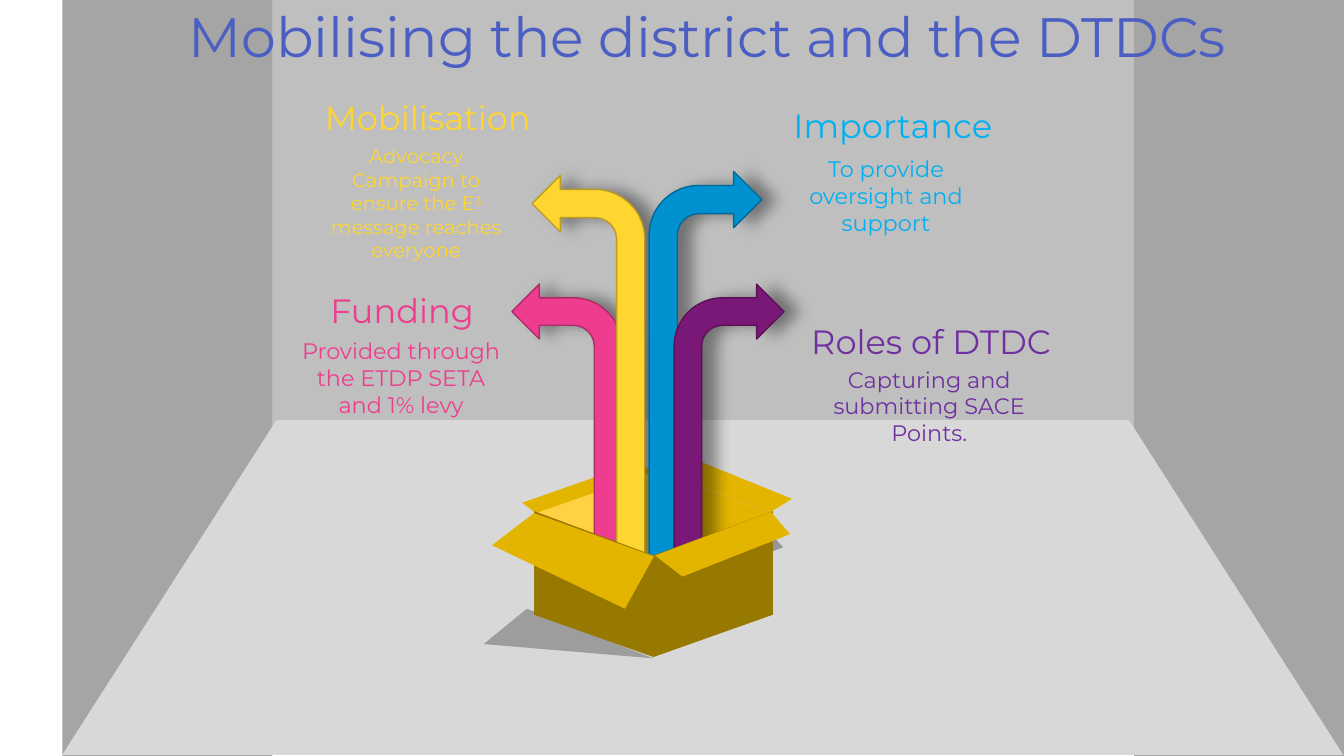
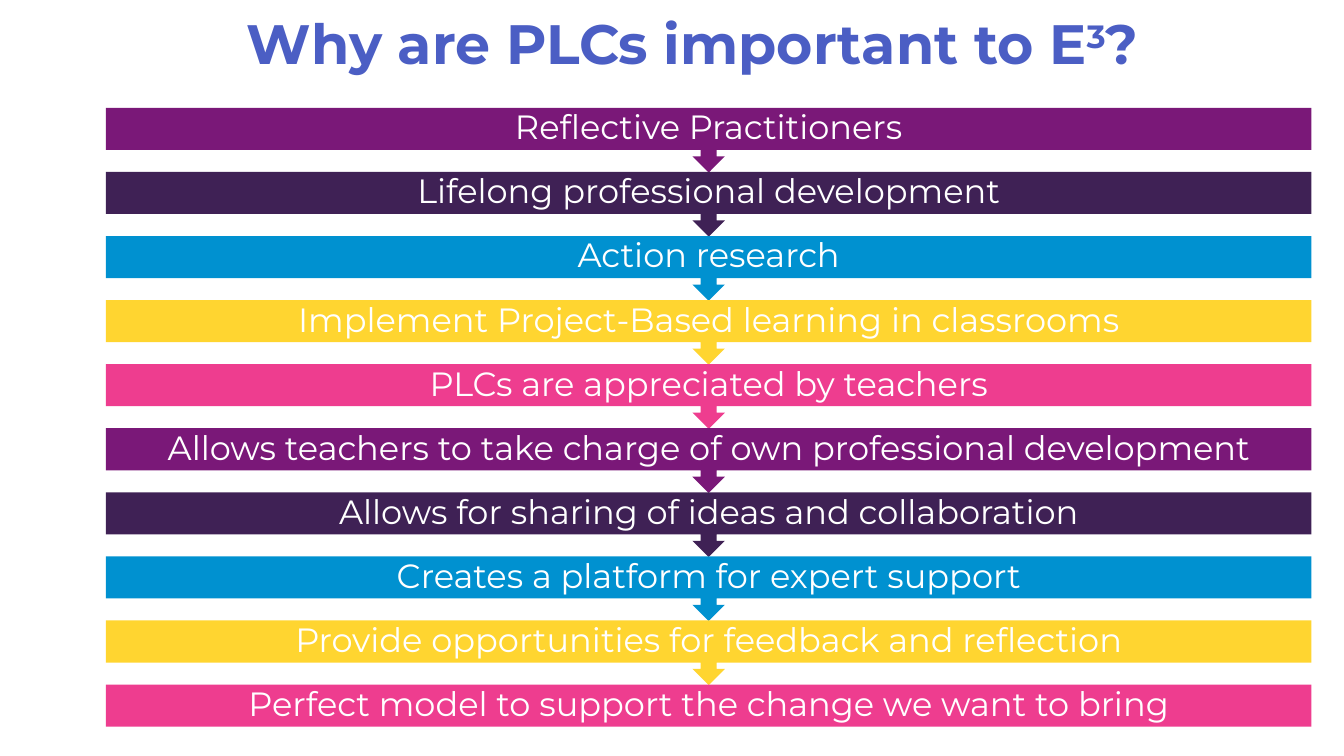
"""Build two slides on mobilising the district and on the value of PLCs."""
import pptx
import pptx.dml.color
import pptx.enum.shapes
import pptx.enum.text
import pptx.oxml
import pptx.oxml.ns
import pptx.util
from pptx.util import Cm

SHAPE = pptx.enum.shapes.MSO_SHAPE
ALIGN = pptx.enum.text.PP_ALIGN
ANCHOR = pptx.enum.text.MSO_ANCHOR
FONT = "Montserrat"
COLOURS = {
    "title": "4B5EC4", "white": "FFFFFF", "black": "000000",
    "back wall": "BFBFBF", "side wall": "A5A5A5", "floor": "D8D8D8",
    "pink": "EE3D8F", "yellow": "FFD530", "blue": "0091D0",
    "purple": "7A1878", "violet": "3F2155",
    "pink edge": "AD2C68", "yellow edge": "BA9B23",
    "blue edge": "006997", "purple edge": "591157",
    "sky": "00B0F0", "lilac": "7030A0",
    "box side": "977800", "flap": "E3B500", "box inside": "FFD243",
}

ROOM = [
    (SHAPE.RECTANGLE, (6.86, 0, 21.72, 13.06), "back wall", []),
    (SHAPE.RECTANGLE, (1.57, 0, 5.29, 19.05), "side wall", []),
    (SHAPE.RECTANGLE, (28.58, 0, 5.29, 19.05), "side wall", []),
    (SHAPE.TRAPEZOID, (1.57, 10.59, 32.28, 8.43), "floor", [0.64]),
]
FLOOR_SHADOW = [(16.46, 16.59), (12.19, 16.23), (13.28, 15.34)]
INNER_SHADOW = [(16.54, 14.27), (17.2, 14.76), (19.74, 13.79), (19.25, 13.28)]
BACK_OF_BOX = [
    ((13.89, 11.4, 2.11, 3.05), 270, "box inside",
     [(16.54, 11.86), (15.98, 11.68), (13.16, 12.67), (13.51, 12.93)]),
    ((16.81, 11.46, 2.36, 3.05), 90, "flap",
     [(16.46, 11.79), (17.15, 11.43), (19.96, 12.57), (19.38, 12.93)]),
]
FRONT_OF_BOX = [
    ("box side", [(13.46, 12.88), (16.48, 14), (16.48, 16.56), (13.46, 15.49)]),
    ("box side", [(19.48, 12.88), (16.46, 14), (16.46, 16.56), (19.48, 15.49)]),
    ("flap", [(13.46, 12.93), (12.4, 13.74), (15.75, 15.34), (16.48, 14.02)]),
    ("flap", [(16.51, 14), (17.2, 14.53), (19.91, 13.46), (19.43, 12.9)]),
]
ARROWS = [
    ("pink", (12.9, 7.16, 2.77, 7.57), True),
    ("yellow", (13.41, 4.42, 2.84, 9.7), True),
    ("blue", (16.36, 4.32, 2.84, 9.7), False),
    ("purple", (16.99, 7.16, 2.77, 7.57), False),
]
TOPICS = [
    ("Funding", (7.11, 7.19, 6.05, 1.27),
     "Provided through the ETDP SETA and 1% levy", (7.19, 8.38, 5.84, 2.31), 16, "pink"),
    ("Roles of DTDC", (19.35, 7.95, 8.23, 1.27),
     "Capturing and submitting SACE Points.", (20.22, 9.09, 6.4, 2.31), 16, "lilac"),
    ("Importance", (19.63, 2.51, 5.74, 1.27),
     "To provide oversight and support", (19.56, 3.78, 5.54, 2.31), 16, "sky"),
    ("Mobilisation", (7.77, 2.31, 6.02, 1.27),
     "Advocacy Campaign to ensure the E^3^ message reaches everyone",
     (7.85, 3.51, 5.28, 3.25), 14, "yellow"),
]
REASONS = [
    "Reflective Practitioners",
    "Lifelong professional development",
    "Action research",
    "Implement Project-Based learning in classrooms",
    "PLCs are appreciated by teachers",
    "Allows teachers to take charge of own professional development",
    "Allows for sharing of ideas and collaboration",
    "Creates a platform for expert support",
    "Provide opportunities for feedback and reflection",
    "Perfect model to support the change we want to bring",
]
REASON_COLOURS = ["purple", "violet", "blue", "yellow", "pink"]
FIRST_TOP, LAST_TOP, BAND_HEIGHT, CALLOUT_HEIGHT = 2.72, 17.25, 1.06, 1.63


def rgb(name):
    return pptx.dml.color.RGBColor.from_string(COLOURS[name])


def cms(box):
    return [Cm(length) for length in box]


def write(frame, text, size, colour, align=ALIGN.CENTER, bold=False, spacing=None):
    """Write text whose parts between carets are superscript."""
    frame.word_wrap = True
    paragraph = frame.paragraphs[0]
    paragraph.alignment = align
    if spacing:
        paragraph.line_spacing = spacing
    for index, part in enumerate(text.split("^")):
        run = paragraph.add_run()
        run.text = part
        run.font.name = FONT
        run.font.size = pptx.util.Pt(size)
        run.font.bold = bold
        run.font.color.rgb = rgb(colour)
        if index % 2:
            run.font._element.set("baseline", "30000")


def paint(shape, colour, alpha=None, edge=None):
    shape.shadow.inherit = False
    shape.fill.solid()
    shape.fill.fore_color.rgb = rgb(colour)
    if alpha:
        tint = shape.element.spPr.find(".//" + pptx.oxml.ns.qn("a:srgbClr"))
        tint.append(pptx.oxml.parse_xml(
            f'<a:alpha {pptx.oxml.ns.nsdecls("a")} val="{alpha * 1000}"/>'))
    if edge:
        shape.line.color.rgb = rgb(edge)
        shape.line.width = pptx.util.Pt(1)
    else:
        shape.line.fill.background()


def add_preset(slide, kind, box, colour, adjustments=(), edge=None):
    shape = slide.shapes.add_shape(kind, *cms(box))
    for index, value in enumerate(adjustments):
        shape.adjustments[index] = value
    paint(shape, colour, edge=edge)
    return shape


def add_outline(slide, points, colour, alpha=None):
    start, *others = [cms(point) for point in points]
    builder = slide.shapes.build_freeform(*start)
    builder.add_line_segments(others, close=True)
    paint(builder.convert_to_shape(), colour, alpha)


def add_text(slide, box, text, size, colour):
    write(slide.shapes.add_textbox(*cms(box)).text_frame, text, size, colour)


def add_title(slide, text, left, top, bold=False):
    title = slide.shapes.title
    title.left, title.top, title.width, title.height = cms((left, top, 27.66, 2.06))
    title.element.getparent().append(title.element)
    frame = title.text_frame
    frame.auto_size = pptx.enum.text.MSO_AUTO_SIZE.NONE
    frame.vertical_anchor = ANCHOR.MIDDLE
    write(frame, text, 39.6, "title", ALIGN.LEFT, bold, 0.9)


def add_arrow(slide, colour, box, points_left):
    arrow = add_preset(slide, SHAPE.BENT_ARROW, box, colour,
                       (0.25, 0.25, 0.25, 0.44), colour + " edge")
    if points_left:
        arrow.element.spPr.xfrm.set("flipH", "1")
    effects = arrow.element.spPr.find(pptx.oxml.ns.qn("a:effectLst"))
    effects.append(pptx.oxml.parse_xml(
        f'<a:outerShdw {pptx.oxml.ns.nsdecls("a")} blurRad="{pptx.util.Pt(11)}" '
        f'dist="{pptx.util.Pt(10)}" dir="0" algn="l" rotWithShape="0">'
        f'<a:srgbClr val="{COLOURS["black"]}"><a:alpha val="40000"/></a:srgbClr>'
        '</a:outerShdw>'))


def build_mobilising(slide):
    for kind, box, colour, adjustments in ROOM:
        add_preset(slide, kind, box, colour, adjustments)
    add_outline(slide, FLOOR_SHADOW, "black", 27)
    for heading, heading_box, detail, detail_box, size, colour in TOPICS:
        add_text(slide, heading_box, heading, 24, colour)
        add_text(slide, detail_box, detail, size, colour)
    for box, rotation, colour, flap in BACK_OF_BOX:
        add_preset(slide, SHAPE.ISOSCELES_TRIANGLE, box, colour).rotation = rotation
        add_outline(slide, flap, "flap")
    add_title(slide, "Mobilising the district and the DTDCs", 4.5, -0.03)
    add_outline(slide, INNER_SHADOW, "black", 30)
    for arrow in ARROWS:
        add_arrow(slide, *arrow)
    for colour, points in FRONT_OF_BOX:
        add_outline(slide, points, colour)


def build_reasons(slide):
    add_title(slide, "Why are PLCs important to E^3^?", 5.97, 0.15, bold=True)
    last = len(REASONS) - 1
    step = (LAST_TOP - FIRST_TOP) / last
    for index, reason in enumerate(REASONS):
        if index < last:
            kind, height = SHAPE.DOWN_ARROW_CALLOUT, CALLOUT_HEIGHT
            adjustments = (0.25, 0.25, 0.25, 0.65)
        else:
            kind, height, adjustments = SHAPE.RECTANGLE, BAND_HEIGHT, ()
        band = add_preset(slide, kind, (2.67, FIRST_TOP + index * step, 30.38, height),
                          REASON_COLOURS[index % len(REASON_COLOURS)], adjustments)
        frame = band.text_frame
        frame.margin_top = frame.margin_bottom = 0
        frame.vertical_anchor = ANCHOR.MIDDLE
        write(frame, reason, 24, "white", spacing=0.9)


def main():
    deck = pptx.Presentation()
    deck.slide_width, deck.slide_height = Cm(33.87), Cm(19.05)
    for build in (build_mobilising, build_reasons):
        build(deck.slides.add_slide(deck.slide_layouts[5]))
    deck.save("out.pptx")


if __name__ == "__main__":
    main()
